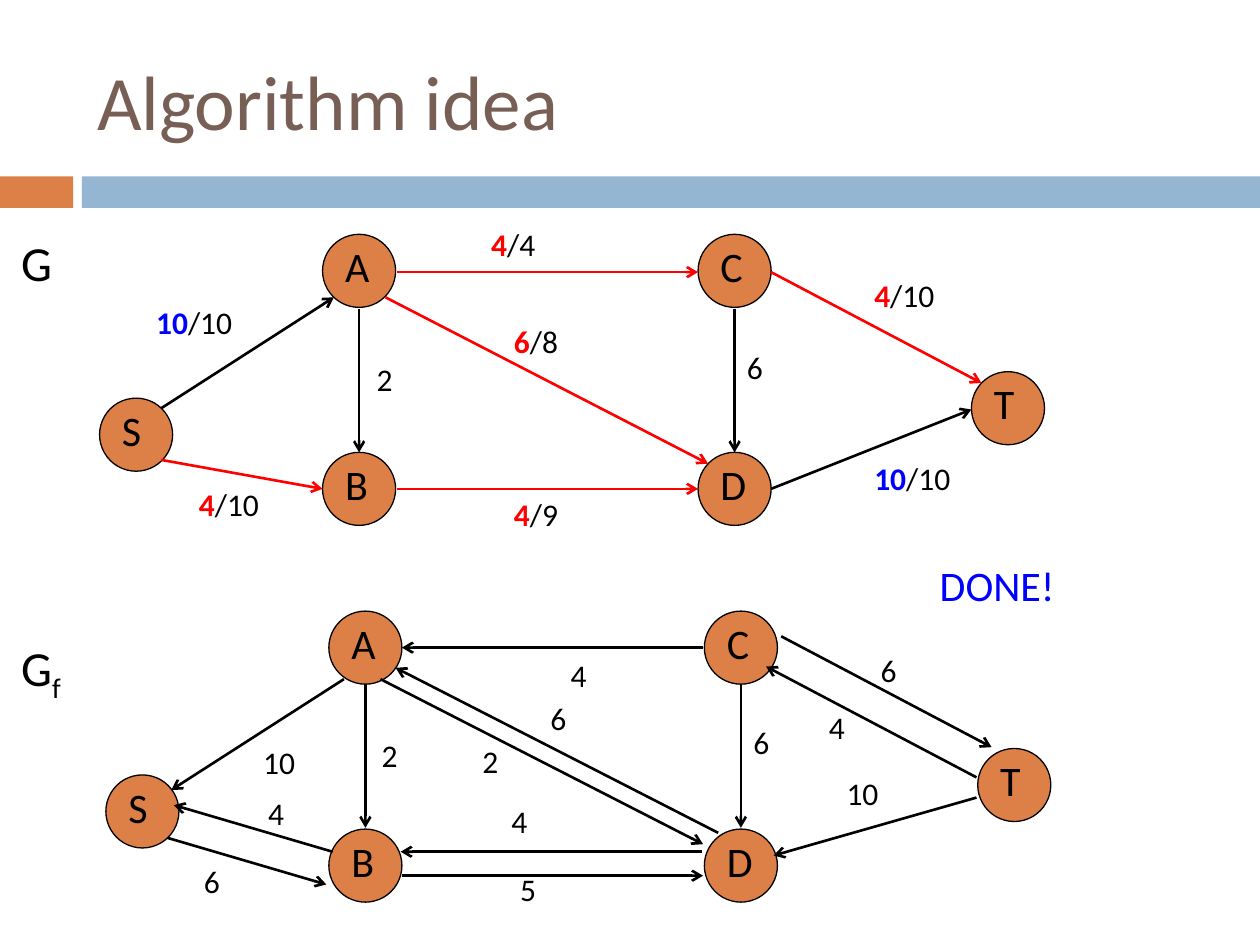
from typing import NamedTuple

from lxml import etree
from pptx import Presentation
from pptx.dml.color import RGBColor
from pptx.enum.shapes import MSO_CONNECTOR, MSO_SHAPE
from pptx.enum.text import MSO_ANCHOR, MSO_AUTO_SIZE, PP_ALIGN
from pptx.oxml.ns import qn
from pptx.util import Emu, Pt

STRAIGHT = MSO_CONNECTOR.STRAIGHT
OVAL, RECTANGLE = MSO_SHAPE.OVAL, MSO_SHAPE.RECTANGLE
MIDDLE, TOP = MSO_ANCHOR.MIDDLE, MSO_ANCHOR.TOP
LEFT = PP_ALIGN.LEFT
GROW = MSO_AUTO_SIZE.SHAPE_TO_FIT_TEXT

BLACK = RGBColor(0x00, 0x00, 0x00)
RED = RGBColor(0xFF, 0x00, 0x00)
BLUE = RGBColor(0x00, 0x00, 0xFF)
BROWN = RGBColor(0x77, 0x5F, 0x55)
ORANGE = RGBColor(0xDD, 0x80, 0x47)
PALE_BLUE = RGBColor(0x94, 0xB6, 0xD2)

FONT = "Calibri"
EMU_PER_PX = 9144  # 100 px to the inch
SLIDE_WIDTH, SLIDE_HEIGHT = 1000, 750
NODE_SIZE = 58

# Node places, relative to the corner of a graph
NODES = {
    "S": (0, 130), "A": (177, 0), "B": (177, 173),
    "C": (475, 0), "D": (475, 173), "T": (692, 109),
}


class Edge(NamedTuple):
    start: tuple
    end: tuple
    label_box: tuple  # left, top, width
    capacity: str
    flow: str = ""
    flow_color: RGBColor = BLACK
    line_color: RGBColor = BLACK


FLOW_EDGES = [
    Edge((49, 138), (186, 50), (35, 50, 95), "/10", "10", BLUE),
    Edge((49, 179), (177, 202), (69, 194, 75), "/10", "4", RED, RED),
    Edge((206, 59), (206, 173), (210, 95, 75), "2"),
    Edge((236, 30), (475, 30), (301, -12, 93), "/4", "4", RED, RED),
    Edge((227, 50), (483, 182), (319, 65, 95), "/8", "6", RED, RED),
    Edge((236, 202), (475, 202), (319, 202, 75), "/9", "4", RED, RED),
    Edge((504, 59), (504, 173), (504, 85, 75), "6"),
    Edge((533, 30), (700, 118), (605, 28, 95), "/10", "4", RED, RED),
    Edge((533, 202), (692, 139), (605, 173, 95), "/10", "10", BLUE),
]

RESIDUAL_EDGES = [
    Edge((189, 54), (52, 142), (115, 100, 75), "10"),
    Edge((49, 180), (175, 217), (68, 194, 75), "6"),
    Edge((180, 191), (54, 154), (119, 140, 75), "4"),
    Edge((206, 58), (206, 172), (209, 94, 75), "2"),
    Edge((474, 29), (235, 29), (359, 31, 93), "4"),
    Edge((218, 54), (474, 185), (289, 99, 95), "2"),
    Edge((486, 176), (230, 45), (343, 65, 95), "6"),
    Edge((235, 210), (474, 210), (319, 201, 75), "5"),
    Edge((473, 191), (234, 191), (312, 147, 75), "4"),
    Edge((504, 58), (504, 172), (504, 84, 75), "6"),
    Edge((536, 20), (703, 108), (605, 27, 95), "6"),
    Edge((691, 132), (524, 44), (564, 72, 95), "4"),
    Edge((691, 148), (530, 194), (578, 124, 95), "10"),
]


def px(*lengths):
    return [Emu(length * EMU_PER_PX) for length in lengths]


def add_run(paragraph, text, size=18, color=BLACK, bold=False, baseline=None):
    run = paragraph.add_run()
    run.text = text
    run.font.name = FONT
    run.font.size = Pt(size)
    run.font.bold = bold
    run.font.color.rgb = color
    if baseline is not None:
        run.font._element.set("baseline", str(baseline))


def add_label(slide, box, text="", **text_format):
    """Add a text box and return its paragraph, open for more runs."""
    shape = slide.shapes.add_textbox(*px(*box))
    frame = shape.text_frame
    frame.word_wrap = True
    frame.auto_size = GROW
    frame.vertical_anchor = TOP
    paragraph = frame.paragraphs[0]
    paragraph.alignment = LEFT
    if text:
        add_run(paragraph, text, **text_format)
    return paragraph


def add_filled_shape(slide, kind, box, color, outline=None):
    shape = slide.shapes.add_shape(kind, *px(*box))
    shape.shadow.inherit = False
    shape.fill.solid()
    shape.fill.fore_color.rgb = color
    if outline is None:
        shape.line.fill.background()
    else:
        shape.line.color.rgb = outline
        shape.line.width = Pt(0.75)


def add_arrow(slide, start, end, color):
    connector = slide.shapes.add_connector(STRAIGHT, *px(*start, *end))
    connector.line.color.rgb = color
    connector.line.width = Pt(1.5)
    line = connector.line._get_or_add_ln()
    etree.SubElement(line, qn("a:tailEnd"), type="arrow")
    etree.SubElement(connector._element.spPr, qn("a:effectLst"))


def build_header(slide, box):
    left, top, width = box
    # Two-part bar
    add_filled_shape(slide, RECTANGLE, (left, top + 140, 58, 25), ORANGE)
    add_filled_shape(slide, RECTANGLE, (left + 65, top + 140, width - 65, 25), PALE_BLUE)
    # Title
    title = slide.shapes.title
    title.left, title.top, title.width, title.height = px(left + 67, top + 25, 892, 108)
    title.text_frame.vertical_anchor = MIDDLE
    paragraph = title.text_frame.paragraphs[0]
    paragraph.alignment = LEFT
    add_run(paragraph, "Algorithm idea", size=44, color=BROWN)


def build_graph(slide, origin, edges):
    left, top = origin

    def place(point):
        return left + point[0], top + point[1]

    # Nodes
    for name, corner in NODES.items():
        x, y = place(corner)
        add_filled_shape(slide, OVAL, (x, y, NODE_SIZE, NODE_SIZE), ORANGE, outline=BLACK)
        add_label(slide, (x + 8, y, 50, 50), name, size=24)
    # Edges with flow and capacity
    for edge in edges:
        add_arrow(slide, place(edge.start), place(edge.end), edge.line_color)
        label_left, label_top, width = edge.label_box
        box = (*place((label_left, label_top)), width, 40)
        paragraph = add_label(slide, box, edge.flow, color=edge.flow_color, bold=True)
        add_run(paragraph, edge.capacity)


def main():
    presentation = Presentation()
    presentation.slide_width, presentation.slide_height = px(SLIDE_WIDTH, SLIDE_HEIGHT)
    slide = presentation.slides.add_slide(presentation.slide_layouts[5])

    build_header(slide, (0, 0, SLIDE_WIDTH))
    # Flow graph
    add_label(slide, (7, 180, 88, 57), "G", size=28)
    build_graph(slide, (79, 186), FLOW_EDGES)
    # Residual graph
    residual_name = add_label(slide, (7, 501, 88, 57), "G", size=28)
    add_run(residual_name, "f", size=28, baseline=-25000)
    build_graph(slide, (84, 485), RESIDUAL_EDGES)
    # Closing remark
    add_label(slide, (736, 439, 272, 50), "DONE!", size=24, color=BLUE)

    presentation.save("out.pptx")


if __name__ == "__main__":
    main()
